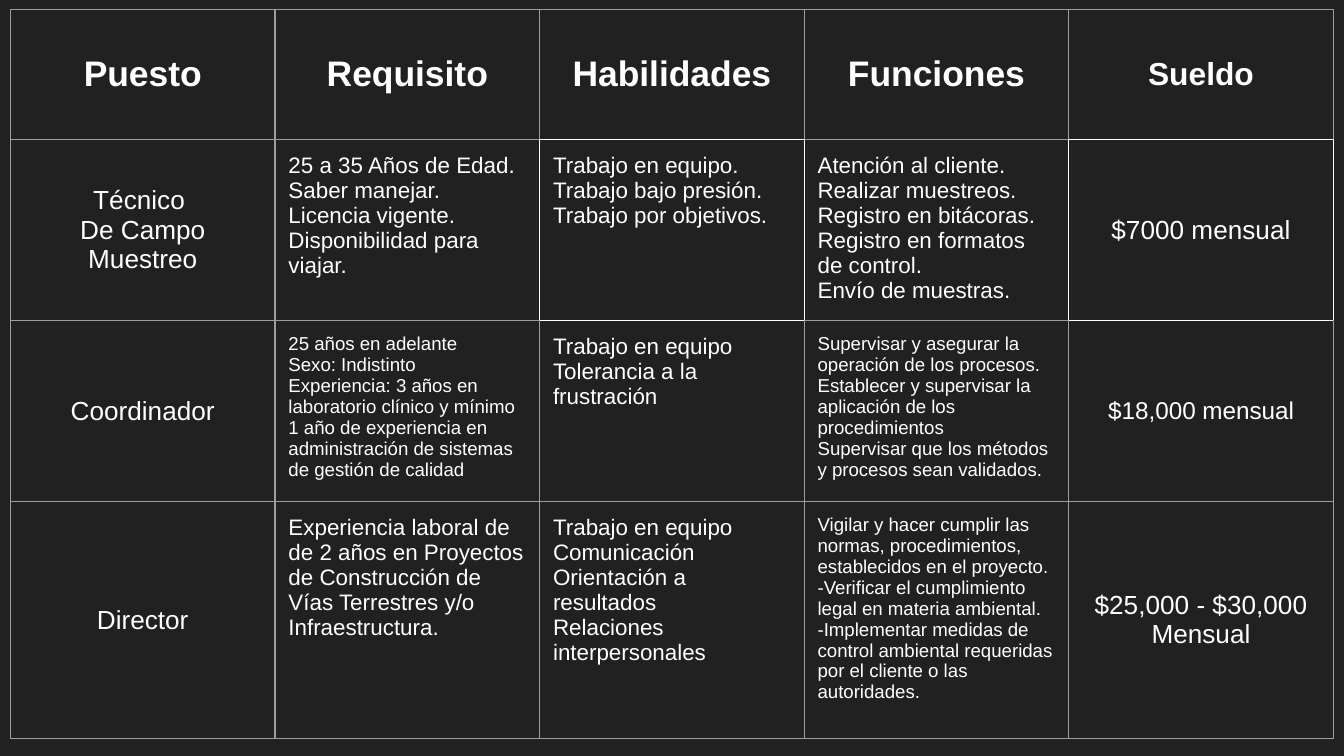
"""Build a slide with a table of job posts, their requirements and pay."""
from lxml.etree import SubElement
from pptx import Presentation
from pptx.dml.color import RGBColor
from pptx.enum.text import MSO_ANCHOR, PP_ALIGN
from pptx.oxml.ns import qn
from pptx.util import Pt

DARK = RGBColor(0x21, 0x21, 0x21)
GREY = RGBColor(0x9E, 0x9E, 0x9E)
WHITE = RGBColor(0xFF, 0xFF, 0xFF)

WIDTH = 141.75
HEIGHTS = [69.75, 97, 97, 126.75]
SIZES = [
    [19, 19, 19, 19, 17],
    [14, 12, 12, 12, 14],
    [14, 10, 12, 10, 13],
    [14, 12, 12, 10, 14],
]
ROWS = [
    ["Puesto", "Requisito", "Habilidades", "Funciones", "Sueldo"],
    [
        "Técnico \nDe Campo Muestreo",
        "25 a 35 Años de Edad.\nSaber manejar.\nLicencia vigente.\n"
        "Disponibilidad para viajar.",
        "Trabajo en equipo.\nTrabajo bajo presión.\nTrabajo por objetivos.",
        "Atención al cliente.\nRealizar muestreos.\nRegistro en bitácoras.\n"
        "Registro en formatos de control.\nEnvío de muestras.",
        "$7000 mensual",
    ],
    [
        "Coordinador",
        "25 años en adelante\nSexo: Indistinto\n"
        "Experiencia: 3 años en laboratorio clínico y mínimo 1 año de "
        "experiencia en administración de sistemas de gestión de calidad",
        "Trabajo en equipo\nTolerancia a la frustración",
        "Supervisar y asegurar la operación de los procesos.\n"
        "Establecer y supervisar la aplicación de los procedimientos\n"
        "Supervisar que los métodos y procesos sean validados.",
        "$18,000 mensual",
    ],
    [
        "Director",
        "Experiencia laboral de de 2 años en Proyectos de Construcción de "
        "Vías Terrestres y/o Infraestructura.",
        "Trabajo en equipo\nComunicación\nOrientación a resultados\n"
        "Relaciones interpersonales",
        "Vigilar y hacer cumplir las normas, procedimientos, establecidos en "
        "el proyecto. -Verificar el cumplimiento legal en materia ambiental.\n"
        "-Implementar medidas de control ambiental requeridas por el cliente "
        "o las autoridades.",
        "$25,000 - $30,000 Mensual",
    ],
]
BRIGHT = {(1, 2), (1, 4)}
SIDES = {"a:lnL": (0, -1), "a:lnR": (0, 1), "a:lnT": (-1, 0), "a:lnB": (1, 0)}
INSETS = dict.fromkeys(
    ["margin_left", "margin_right", "margin_top", "margin_bottom"], Pt(7.2))


def edge(cell, tag, color):
    line = SubElement(cell._tc.get_or_add_tcPr(), qn(tag), w=str(Pt(0.75)))
    fill = SubElement(line, qn("a:solidFill"))
    SubElement(fill, qn("a:srgbClr"), val=str(color))


deck = Presentation()
deck.slide_width, deck.slide_height = Pt(720), Pt(405)
slide = deck.slides.add_slide(deck.slide_layouts[6])
slide.background.fill.solid()
slide.background.fill.fore_color.rgb = DARK

frame = slide.shapes.add_table(
    len(ROWS), len(ROWS[0]), Pt(5.6), Pt(5.1),
    Pt(WIDTH * len(ROWS[0])), Pt(sum(HEIGHTS)))
table = frame.table
table.horz_banding = False
for column in table.columns:
    column.width = Pt(WIDTH)

for r, (texts, height) in enumerate(zip(ROWS, HEIGHTS)):
    table.rows[r].height = Pt(height)
    for c, text in enumerate(texts):
        cell = table.cell(r, c)
        middle = r == 0 or c in (0, 4)
        anchor = MSO_ANCHOR.MIDDLE if middle else MSO_ANCHOR.TOP
        for name, value in {**INSETS, "vertical_anchor": anchor}.items():
            setattr(cell, name, value)
        for tag, (down, right) in SIDES.items():
            lit = BRIGHT & {(r, c), (r + down, c + right)}
            edge(cell, tag, WHITE if lit else GREY)
        cell.fill.background()
        cell.text = text
        style = {"name": "Arial", "size": Pt(SIZES[r][c]), "bold": r == 0}
        for para in cell.text_frame.paragraphs:
            para.alignment = PP_ALIGN.CENTER if middle else PP_ALIGN.LEFT
            for run in para.runs:
                for name, value in style.items():
                    setattr(run.font, name, value)
                run.font.color.rgb = WHITE

deck.save("out.pptx")
